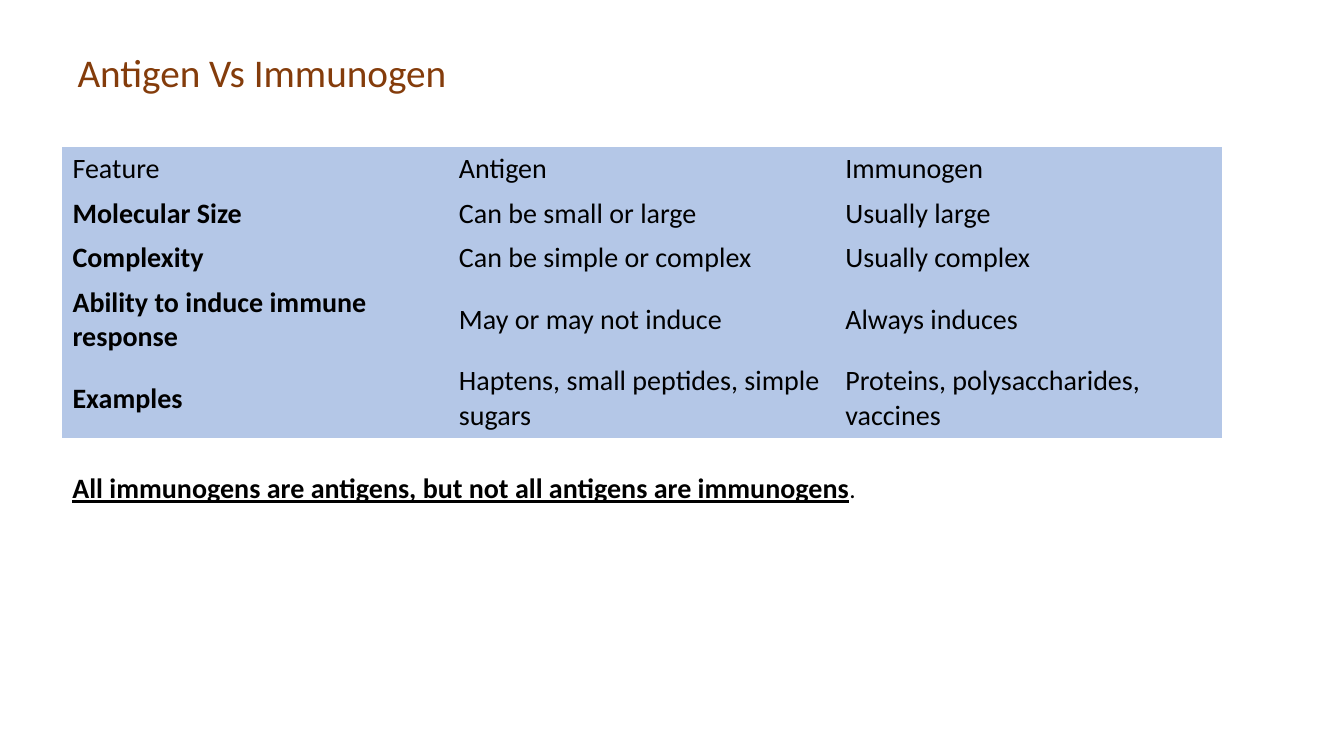
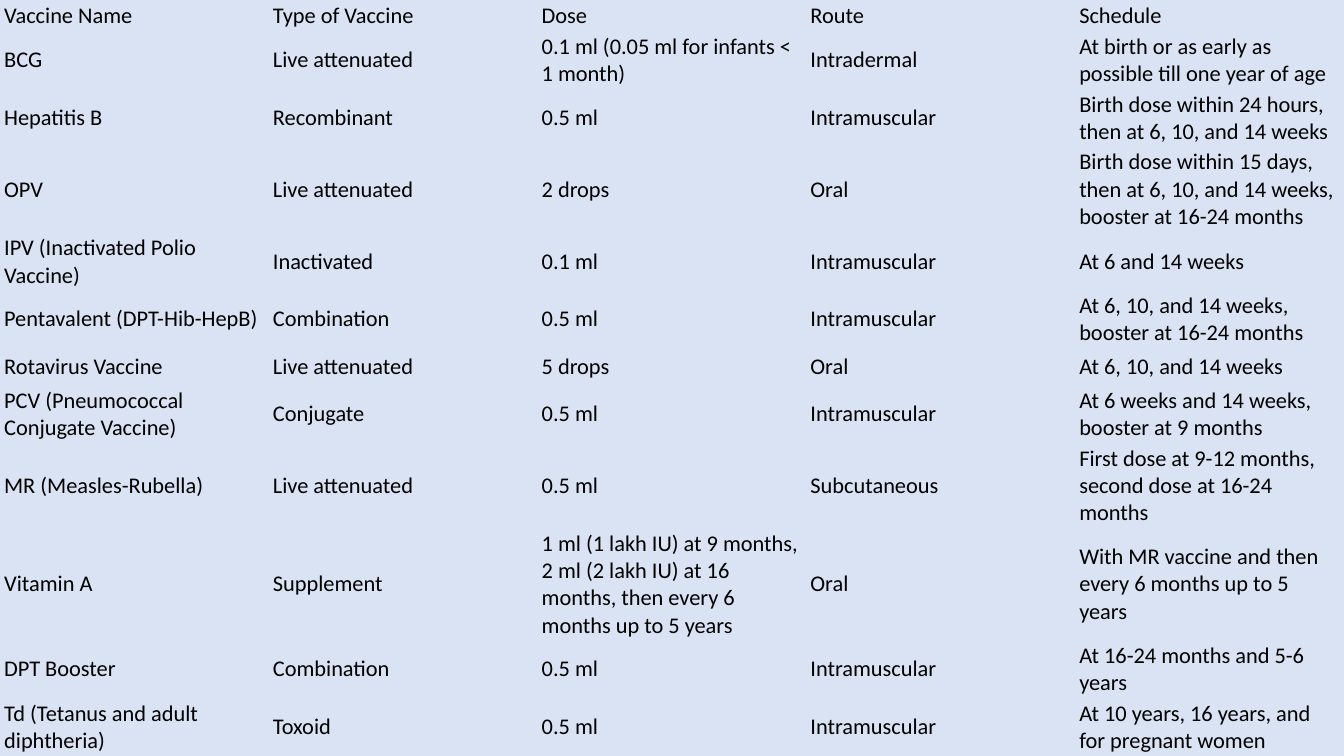
from pptx import Presentation
from pptx.dml.color import RGBColor
from pptx.enum.text import MSO_ANCHOR, MSO_AUTO_SIZE
from pptx.oxml.ns import qn
from pptx.util import Inches, Pt

COLORS = {"text": "000000", "title": "843C0B", "feature": "B4C7E7", "vaccine": "DAE3F3"}
FONT = "Calibri"
PLAIN_TABLE = "{2D5ABB26-0587-4C30-8999-92F81FD0307C}"

deck = Presentation()
deck.slide_width, deck.slide_height = Inches(13.33), Inches(7.5)
blank = deck.slide_layouts[6]


def place(left, top, width, height):
    """Turn percentages of the slide into lengths."""
    sides = [deck.slide_width, deck.slide_height] * 2
    return [round(side * share / 100) for side, share in zip(sides, (left, top, width, height))]


def style(span, size, color="text", bold=False, underline=False):
    font = span.font
    font.name, font.size, font.bold, font.underline = FONT, Pt(size), bold, underline
    font.color.rgb = RGBColor.from_string(COLORS[color])


features = [
    ["Feature", "Antigen", "Immunogen"],
    ["Molecular Size", "Can be small or large", "Usually large"],
    ["Complexity", "Can be simple or complex", "Usually complex"],
    ["Ability to induce immune response", "May or may not induce", "Always induces"],
    ["Examples", "Haptens, small peptides, simple sugars", "Proteins, polysaccharides, vaccines"],
]

vaccines = [
    ["Vaccine Name", "Type of Vaccine", "Dose", "Route", "Schedule"],
    ["BCG", "Live attenuated", "0.1 ml (0.05 ml for infants < 1 month)", "Intradermal",
     "At birth or as early as possible till one year of age"],
    ["Hepatitis B", "Recombinant", "0.5 ml", "Intramuscular",
     "Birth dose within 24 hours, then at 6, 10, and 14 weeks"],
    ["OPV", "Live attenuated", "2 drops", "Oral",
     "Birth dose within 15 days, then at 6, 10, and 14 weeks, booster at 16-24 months"],
    ["IPV (Inactivated Polio Vaccine)", "Inactivated", "0.1 ml", "Intramuscular",
     "At 6 and 14 weeks"],
    ["Pentavalent (DPT-Hib-HepB)", "Combination", "0.5 ml", "Intramuscular",
     "At 6, 10, and 14 weeks, booster at 16-24 months"],
    ["Rotavirus Vaccine", "Live attenuated", "5 drops", "Oral", "At 6, 10, and 14 weeks"],
    ["PCV (Pneumococcal Conjugate Vaccine)", "Conjugate", "0.5 ml", "Intramuscular",
     "At 6 weeks and 14 weeks, booster at 9 months"],
    ["MR (Measles-Rubella)", "Live attenuated", "0.5 ml", "Subcutaneous",
     "First dose at 9-12 months, second dose at 16-24 months"],
    ["Vitamin A", "Supplement",
     "1 ml (1 lakh IU) at 9 months, 2 ml (2 lakh IU) at 16 months, then every 6 months up to 5 years",
     "Oral", "With MR vaccine and then every 6 months up to 5 years"],
    ["DPT Booster", "Combination", "0.5 ml", "Intramuscular", "At 16-24 months and 5-6 years"],
    ["Td (Tetanus and adult diphtheria)", "Toxoid", "0.5 ml", "Intramuscular",
     "At 10 years, 16 years, and for pregnant women"],
]

# Tables: rows, place, relative row heights, fill, text size, side and top insets, bold labels
tables = [
    (features, (4.65, 19.47, 86.25, 38.36), [0.44] * 3 + [0.78] * 2,
     "feature", 20, 7.2, 3.6, True),
    (vaccines, (0, 0, 100, 100),
     [0.31, 0.57, 0.57, 0.85, 0.57, 0.57, 0.37, 0.57, 0.84, 1.11, 0.57, 0.57],
     "vaccine", 16, 3, 1.2, False),
]

for rows, area, weights, fill, size, side_inset, top_inset, bold_labels in tables:
    page = deck.slides.add_slide(blank)
    left, top, width, height = place(*area)
    frame = page.shapes.add_table(len(rows), len(rows[0]), left, top, width, height)
    table = frame.table
    table.first_row = table.horz_banding = False
    for style_id in frame.element.iter(qn("a:tableStyleId")):
        style_id.text = PLAIN_TABLE
    for column in table.columns:
        column.width = round(width / len(rows[0]))
    for r, (row, weight) in enumerate(zip(rows, weights)):
        table.rows[r].height = round(height * weight / sum(weights))
        for c, text in enumerate(row):
            cell = table.cell(r, c)
            cell.fill.solid()
            cell.fill.fore_color.rgb = RGBColor.from_string(COLORS[fill])
            cell.vertical_anchor = MSO_ANCHOR.MIDDLE
            cell.margin_left = cell.margin_right = Pt(side_inset)
            cell.margin_top = cell.margin_bottom = Pt(top_inset)
            cell.text_frame.text = text
            style(cell.text_frame.paragraphs[0].runs[0], size,
                  bold=bold_labels and r > 0 and c == 0)

# First slide: closing statement and title, as (text, size, color, bold and underlined)
captions = [
    ((4.65, 61.6, 65.2, 5.87),
     [("All immunogens are antigens, but not all antigens are immunogens", 20, "text", True),
      (".", 18, "text", False)]),
    ((5.03, 5.73, 34.5, 7.6), [("Antigen Vs Immunogen", 28, "title", False)]),
]
for area, spans in captions:
    box = deck.slides[0].shapes.add_textbox(*place(*area))
    box.text_frame.word_wrap = True
    box.text_frame.auto_size = MSO_AUTO_SIZE.SHAPE_TO_FIT_TEXT
    para = box.text_frame.paragraphs[0]
    for text, size, color, strong in spans:
        span = para.add_run()
        span.text = text
        style(span, size, color, strong, strong)

deck.save("out.pptx")
